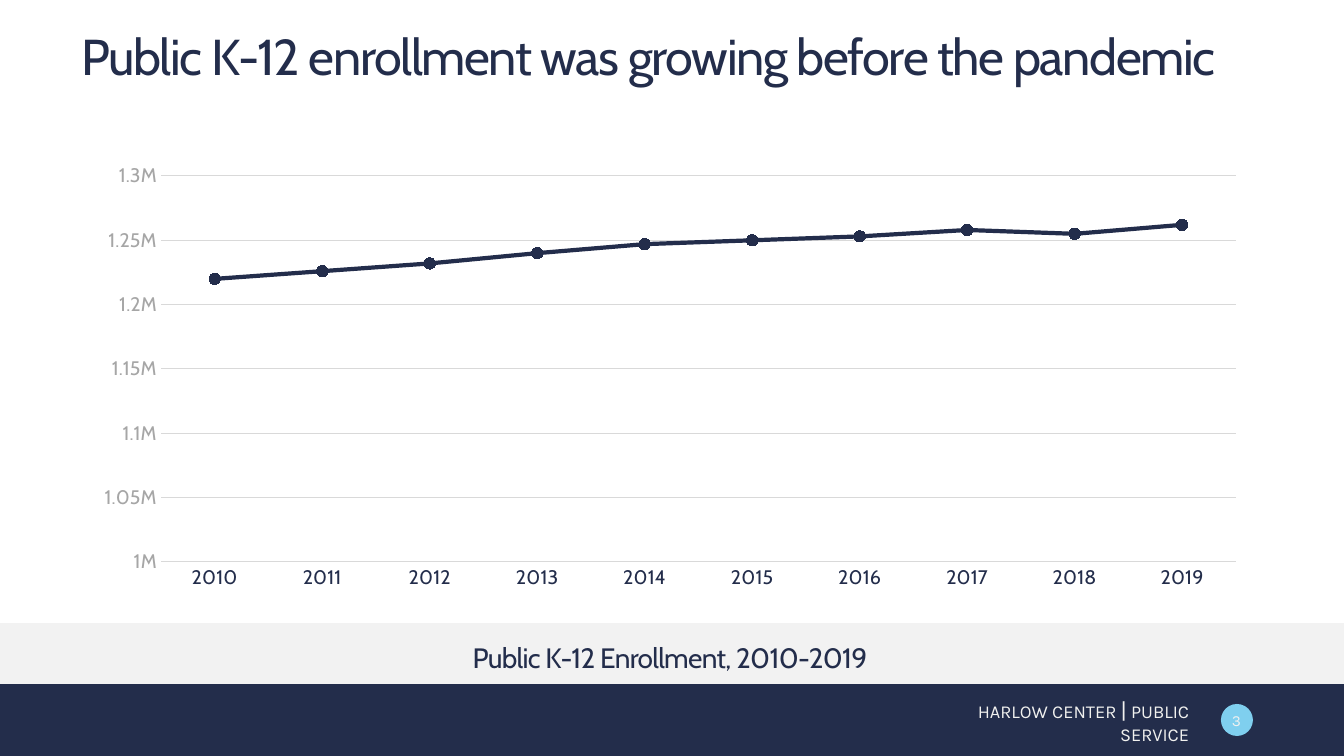
"""Build a slide with a line chart of public K-12 enrollment from 2010 to 2019."""
from lxml.etree import SubElement
from pptx import Presentation
from pptx.chart.data import CategoryChartData
from pptx.dml.color import RGBColor
from pptx.enum.chart import XL_CHART_TYPE, XL_MARKER_STYLE, XL_TICK_MARK
from pptx.enum.shapes import MSO_SHAPE
from pptx.enum.text import MSO_ANCHOR, MSO_AUTO_SIZE, PP_ALIGN
from pptx.oxml.ns import qn
from pptx.util import Pt

PX = 914400 / 100.8
COLORS = {
    "navy": "232D4B",
    "sky": "7FCFEF",
    "band": "F2F2F2",
    "pale": "F1F1EF",
    "grid": "D9D9D9",
    "gray": "A6A6A6",
}


def px(*lengths):
    return [round(length * PX) for length in lengths]


def style_text(frame, anchor, align, font_name, sizes, color, spacing=0):
    frame.word_wrap = True
    frame.auto_size = MSO_AUTO_SIZE.NONE
    frame.vertical_anchor = anchor
    paragraph = frame.paragraphs[0]
    paragraph.alignment = align
    for run, size in zip(paragraph.runs, sizes):
        run.font.name = font_name
        run.font.size = Pt(size)
        run.font.bold = False
        run.font.color.rgb = RGBColor.from_string(COLORS[color])
        if spacing:
            run.font._element.set("spc", str(spacing))
    return paragraph


deck = Presentation()
deck.slide_width, deck.slide_height = px(1344, 756)
slide = deck.slides.add_slide(deck.slide_layouts[5])

for outline, box, color in (
    (MSO_SHAPE.RECTANGLE, (0, 684, 1344, 72), "navy"),
    (MSO_SHAPE.OVAL, (1221, 704, 32, 32), "sky"),
    (MSO_SHAPE.RECTANGLE, (0, 623, 1344, 61), "band"),
):
    backdrop = slide.shapes.add_shape(outline, *px(*box))
    backdrop.shadow.inherit = False
    backdrop.fill.solid()
    backdrop.fill.fore_color.rgb = RGBColor.from_string(COLORS[color])
    backdrop.line.fill.background()

headline = slide.shapes.title
headline.left, headline.top, headline.width, headline.height = px(71, 24, 1182, 61)
headline.text_frame.text = "Public K-12 enrollment was growing before the pandemic"
headline.text_frame.margin_bottom = 0
headline_line = style_text(
    headline.text_frame, MSO_ANCHOR.BOTTOM, PP_ALIGN.LEFT, "Cabin", [36], "navy", -100
)
headline_line.line_spacing = 0.8

publisher = slide.shapes.add_textbox(*px(927, 701, 272, 40)).text_frame
for part in ("HARLOW CENTER ", "|", " PUBLIC SERVICE"):
    publisher.paragraphs[0].add_run().text = part
style_text(publisher, MSO_ANCHOR.MIDDLE, PP_ALIGN.RIGHT, "Karla", [13, 16, 13], "pale")

page_number = slide.shapes.add_textbox(*px(1214, 703, 45, 35)).text_frame
page_number.text = "3"
style_text(page_number, MSO_ANCHOR.MIDDLE, PP_ALIGN.CENTER, "Karla", [11], "pale")

caption = slide.shapes.add_textbox(*px(81, 639, 1178, 36)).text_frame
caption.text = "Public K-12 Enrollment, 2010-2019"
caption_line = style_text(
    caption, MSO_ANCHOR.TOP, PP_ALIGN.CENTER, "Cabin", [20], "navy", -50
)
caption_line.line_spacing = 0.9
caption_line.space_before = Pt(10)

enrollment_data = CategoryChartData()
enrollment_data.categories = [str(year) for year in range(2010, 2020)]
thousands = (1220, 1226, 1232, 1240, 1247, 1250, 1253, 1258, 1255, 1262)
enrollment_data.add_series("Series 1", [count * 1000 for count in thousands])
chart = slide.shapes.add_chart(
    XL_CHART_TYPE.LINE_MARKERS, *px(81, 155, 1179, 444), enrollment_data
).chart
chart.has_legend = False
chart.has_title = False
chart.font.name = "Karla"
chart.font.size = Pt(14)

years, pupils = chart.category_axis, chart.value_axis
for axis, color in ((years, "navy"), (pupils, "gray")):
    axis.major_tick_mark = axis.minor_tick_mark = XL_TICK_MARK.NONE
    labels = axis.tick_labels.font
    labels.name = "Cabin"
    labels.size = Pt(14)
    labels.color.rgb = RGBColor.from_string(COLORS[color])
pupils.minimum_scale = 1000000
pupils.maximum_scale = 1300000
pupils.major_unit = 50000
pupils.tick_labels.number_format = '#.##,,"M"'
pupils.tick_labels.number_format_is_linked = False
pupils.format.line.fill.background()
for rule in (years.format.line, pupils.major_gridlines.format.line):
    rule.color.rgb = RGBColor.from_string(COLORS["grid"])
    rule.width = Pt(0.75)

enrollment = chart.plots[0].series[0]
chart.plots[0].vary_by_categories = False
enrollment.smooth = False
enrollment.format.line.color.rgb = RGBColor.from_string(COLORS["navy"])
enrollment.format.line.width = Pt(3)
enrollment.marker.style = XL_MARKER_STYLE.CIRCLE
enrollment.marker.size = 8
enrollment.marker.format.fill.solid()
enrollment.marker.format.fill.fore_color.rgb = RGBColor.from_string(COLORS["navy"])
enrollment.marker.format.line.color.rgb = RGBColor.from_string(COLORS["navy"])

plot_area = chart._chartSpace.chart.plotArea
for old_layout in plot_area.findall(qn("c:layout")):
    plot_area.remove(old_layout)
layout = SubElement(plot_area, qn("c:layout"))
plot_area.insert(0, layout)
manual = SubElement(layout, qn("c:manualLayout"))
for tag, value in (
    ("layoutTarget", "inner"),
    ("xMode", "edge"),
    ("yMode", "edge"),
    ("x", 80 / 1179),
    ("y", 21 / 444),
    ("w", 1075 / 1179),
    ("h", 386 / 444),
):
    SubElement(manual, qn(f"c:{tag}")).set("val", str(value))

deck.save("out.pptx")
